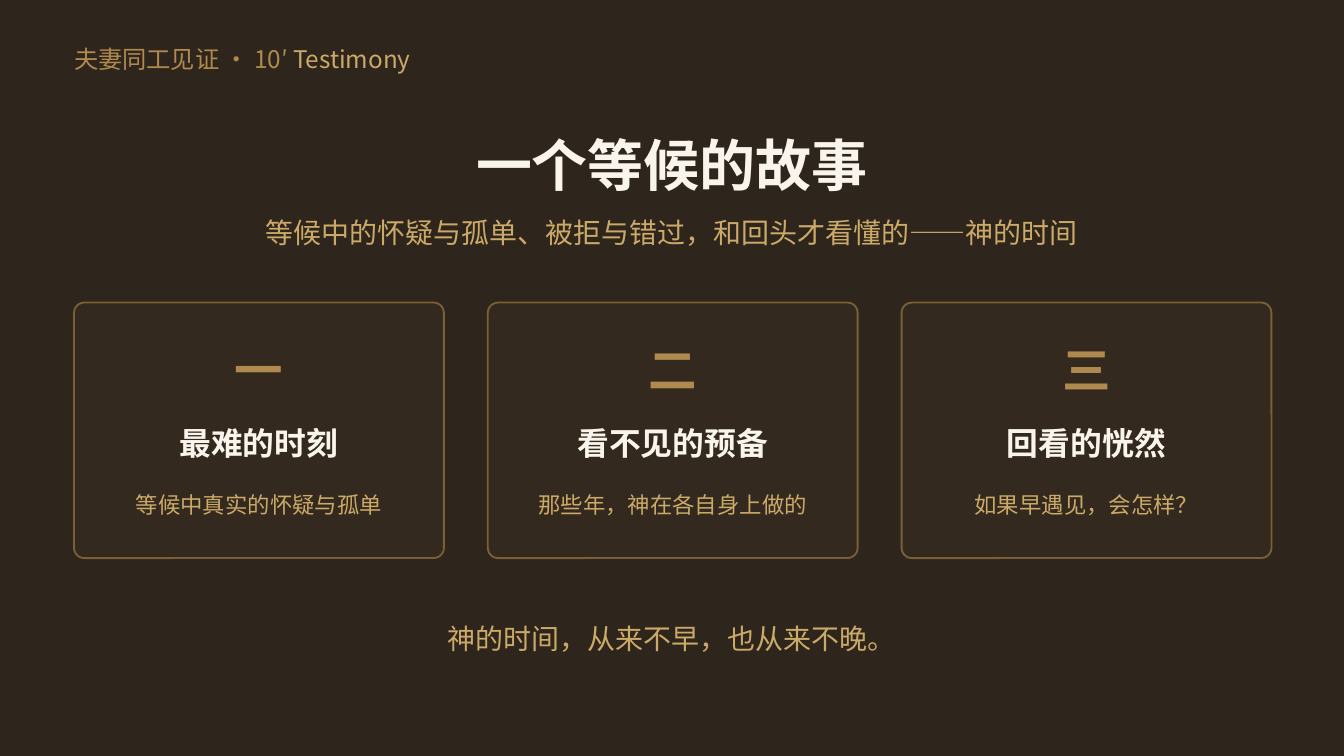
from lxml import etree
from pptx import Presentation
from pptx.dml.color import RGBColor
from pptx.enum.shapes import MSO_SHAPE
from pptx.enum.text import MSO_ANCHOR, MSO_AUTO_SIZE, PP_ALIGN
from pptx.oxml.ns import qn
from pptx.util import Cm, Pt

ROUND = MSO_SHAPE.ROUNDED_RECTANGLE
MIDDLE = MSO_ANCHOR.MIDDLE
FIXED = MSO_AUTO_SIZE.NONE
LEFT, CENTER = PP_ALIGN.LEFT, PP_ALIGN.CENTER
FACE = "Noto Sans CJK SC"
COLORS = {
    "back": "2E261C",
    "card": "33291E",
    "edge": "7A5F37",
    "bronze": "B0894F",
    "gold": "CBA968",
    "cream": "FAF5EC",
}


def color(name):
    return RGBColor.from_string(COLORS[name])


def write(box, text, size, tint, bold=False, align=CENTER):
    """Fill a box with one paragraph, without insets, and return it."""
    frame = box.text_frame
    frame.word_wrap = True
    frame.auto_size = FIXED
    frame.vertical_anchor = MIDDLE
    frame.margin_left = frame.margin_right = 0
    frame.margin_top = frame.margin_bottom = 0
    para = frame.paragraphs[0]
    para.text = text
    para.alignment = align
    font = para.font
    font.name, font.size, font.bold = FACE, Pt(size), bold
    font.color.rgb = color(tint)
    # Chinese glyphs take the East Asian typeface
    etree.SubElement(font._rPr, qn("a:ea"), typeface=FACE)
    return para


prs = Presentation()
prs.slide_width, prs.slide_height = Cm(25.4), Cm(14.29)
slide = prs.slides.add_slide(prs.slide_layouts[5])
shapes = slide.shapes
slide.background.fill.solid()
slide.background.fill.fore_color.rgb = color("back")

# Section label
label = shapes.add_textbox(Cm(1.4), Cm(0.71), Cm(21.59), Cm(0.81))
para = write(label, "夫妻同工见证 · 10′ ", 13, "bronze", align=LEFT)
run = para.add_run()
run.text = "Testimony"
run.font.color.rgb = color("gold")

# Title
title = shapes.title
title.left, title.top = Cm(1.27), Cm(2.41)
title.width, title.height = Cm(22.86), Cm(1.4)
write(title, "一个等候的故事", 30, "cream", bold=True)

# Subtitle and closing line
for top, height, text in [
    (3.94, 0.89, "等候中的怀疑与孤单、被拒与错过，和回头才看懂的——神的时间"),
    (11.56, 1.02, "神的时间，从来不早，也从来不晚。"),
]:
    line = shapes.add_textbox(Cm(1.27), Cm(top), Cm(22.86), Cm(height))
    write(line, text, 15, "gold")

# Three cards: number, heading, detail
cards = [
    ("一", "最难的时刻", "等候中真实的怀疑与孤单"),
    ("二", "看不见的预备", "那些年，神在各自身上做的"),
    ("三", "回看的恍然", "如果早遇见，会怎样？"),
]
# inset, top, height, size, colour, bold
rows = [
    (0, 6.35, 1.27, 26, "bronze", True),
    (0.38, 7.87, 1.02, 17, "cream", True),
    (0.38, 9.02, 1.02, 12, "gold", False),
]
start, width, pitch = 1.4, 6.99, 7.82
for i, texts in enumerate(cards):
    left = start + i * pitch
    card = shapes.add_shape(ROUND, Cm(left), Cm(5.72), Cm(width), Cm(4.83))
    card.adjustments[0] = 0.04
    card.shadow.inherit = False
    card.fill.solid()
    card.fill.fore_color.rgb = color("card")
    card.line.color.rgb = color("edge")
    card.line.width = Pt(1)
    for text, (inset, top, height, size, tint, bold) in zip(texts, rows):
        box = shapes.add_textbox(
            Cm(left + inset), Cm(top), Cm(width - 2 * inset), Cm(height))
        write(box, text, size, tint, bold)

prs.save("out.pptx")
